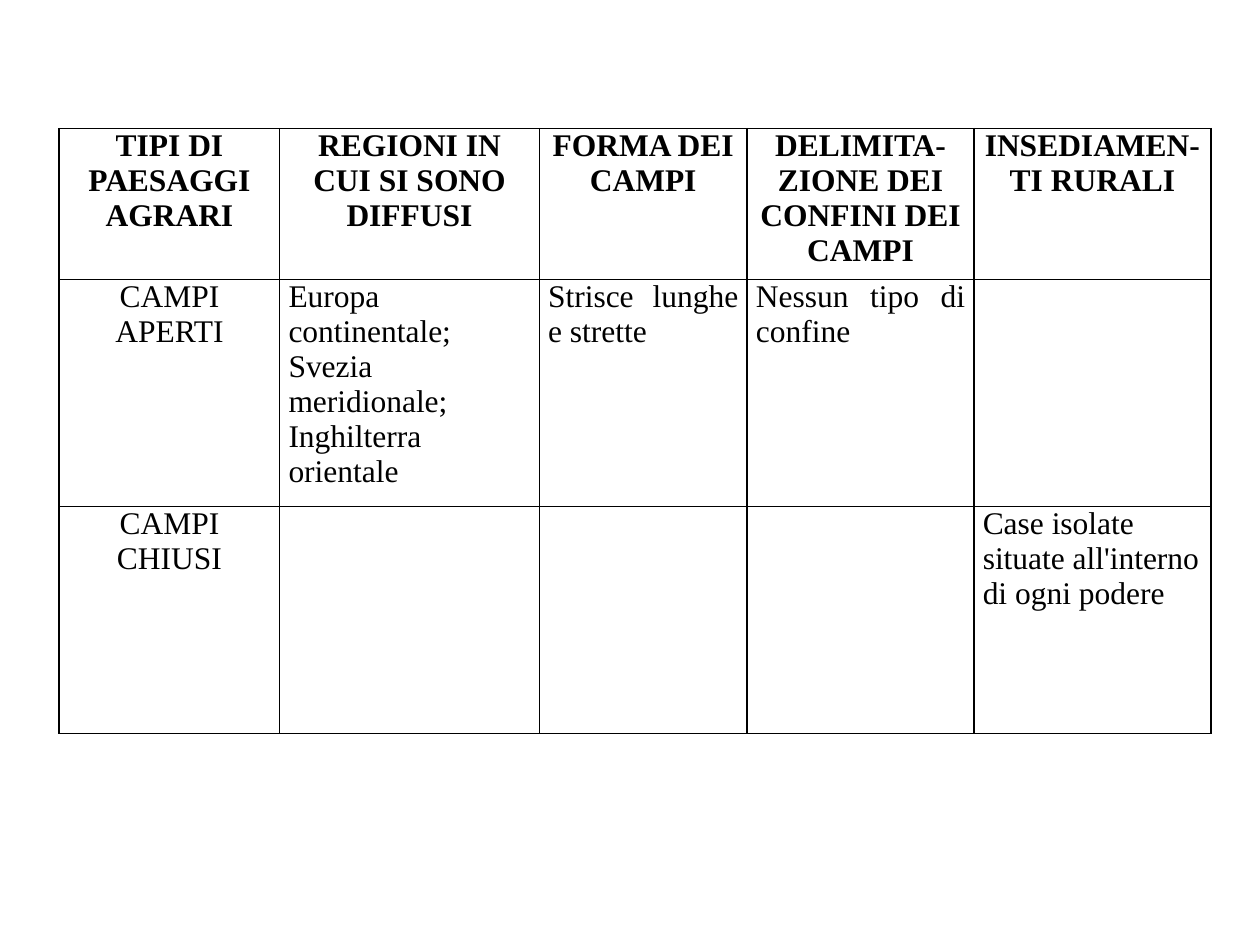
from lxml.etree import SubElement
from pptx import Presentation
from pptx.dml.color import RGBColor
from pptx.enum.text import PP_ALIGN
from pptx.oxml.ns import qn
from pptx.util import Inches, Pt


def color(value):
    return RGBColor.from_string(value)


def add_borders(cell, value, width):
    properties = cell._tc.get_or_add_tcPr()
    for position, side in enumerate(("lnL", "lnR", "lnT", "lnB")):
        line = SubElement(properties, qn(f"a:{side}"), w=str(Pt(width)))
        fill = SubElement(line, qn("a:solidFill"))
        SubElement(fill, qn("a:srgbClr"), val=value)
        # Borders come before the cell fill
        properties.insert(position, line)


presentation = Presentation()
presentation.slide_width = Inches(10)
presentation.slide_height = Inches(7.5)
slide = presentation.slides.add_slide(presentation.slide_layouts[6])

# Table content
rows = [
    ["TIPI DI PAESAGGI AGRARI", "REGIONI IN CUI SI SONO DIFFUSI", "FORMA DEI CAMPI",
     "DELIMITA-ZIONE DEI CONFINI DEI CAMPI", "INSEDIAMEN-TI RURALI"],
    ["CAMPI APERTI", "Europa continentale; Svezia meridionale; Inghilterra orientale",
     "Strisce lunghe e strette", "Nessun tipo di confine", ""],
    ["CAMPI CHIUSI", "", "", "", "Case isolate situate all'interno di ogni podere"],
]
column_widths = [1.75, 2.06, 1.65, 1.8, 1.88]
row_heights = [1.2, 1.8, 1.8]
body_alignments = [PP_ALIGN.CENTER, PP_ALIGN.LEFT, PP_ALIGN.JUSTIFY,
                   PP_ALIGN.JUSTIFY, PP_ALIGN.LEFT]
margins = {"margin_left": Inches(0.07), "margin_right": Inches(0.07),
           "margin_top": 0, "margin_bottom": 0}
font_format = {"name": "Times New Roman", "size": Pt(18)}

# Table grid
table = slide.shapes.add_table(
    len(rows), len(column_widths), Inches(0.47), Inches(1.02),
    Inches(sum(column_widths)), Inches(sum(row_heights))).table
table.horz_banding = False
for column, width in zip(table.columns, column_widths):
    column.width = Inches(width)
for row, height in zip(table.rows, row_heights):
    row.height = Inches(height)

# Cells
for row_index, texts in enumerate(rows):
    is_header = row_index == 0
    for column_index, text in enumerate(texts):
        cell = table.cell(row_index, column_index)
        cell.fill.solid()
        cell.fill.fore_color.rgb = color("FFFFFF")
        add_borders(cell, "000000", 1)
        for name, value in margins.items():
            setattr(cell, name, value)
        cell.text = text
        paragraph = cell.text_frame.paragraphs[0]
        paragraph.alignment = PP_ALIGN.CENTER if is_header else body_alignments[column_index]
        for name, value in font_format.items():
            setattr(paragraph.font, name, value)
        paragraph.font.bold = is_header
        paragraph.font.color.rgb = color("000000")

presentation.save("out.pptx")
